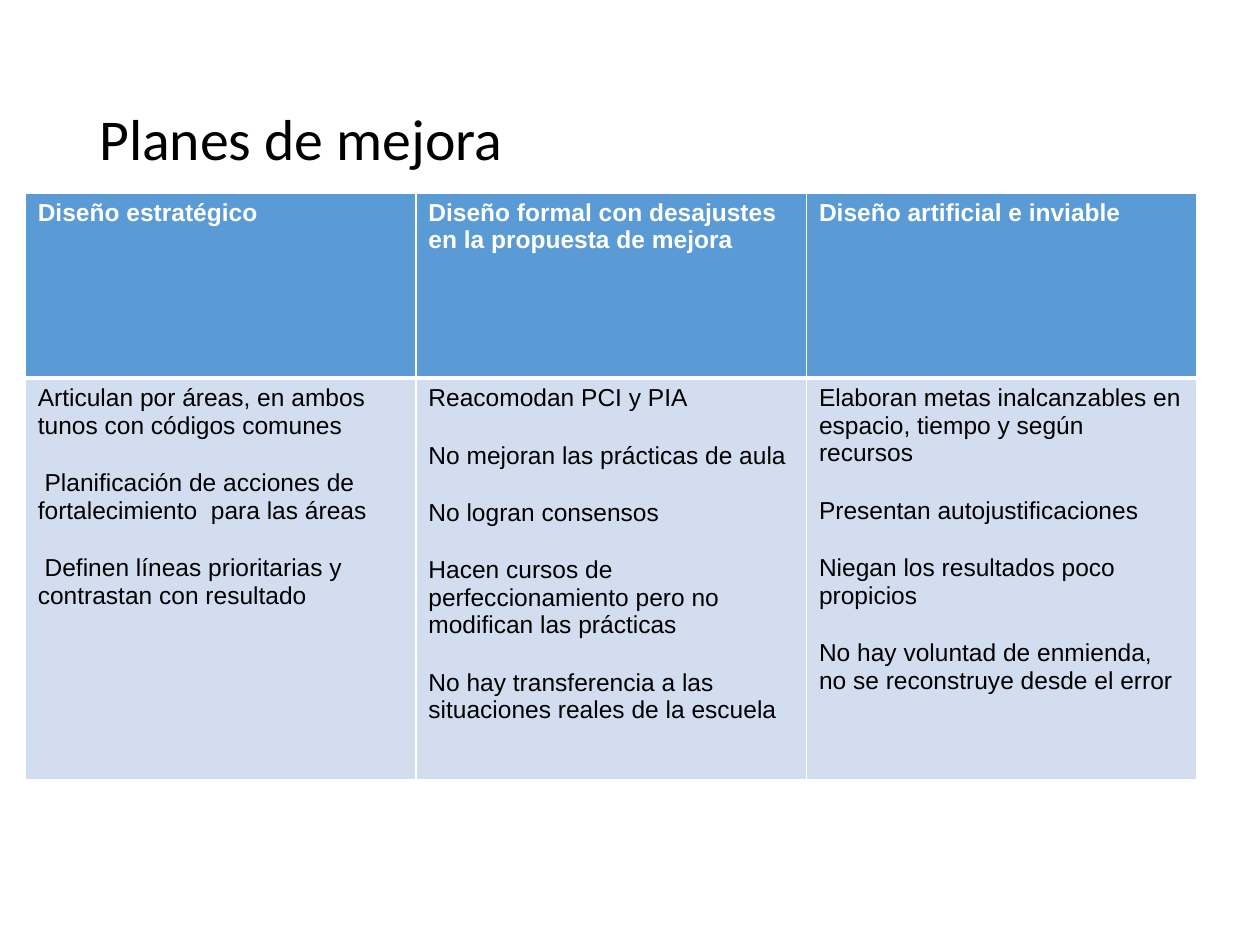
from dataclasses import dataclass

from lxml import etree
from pptx import Presentation
from pptx.dml.color import RGBColor
from pptx.enum.text import MSO_ANCHOR, MSO_AUTO_SIZE, PP_ALIGN
from pptx.oxml.ns import qn
from pptx.util import Pt

LEFT = PP_ALIGN.LEFT
MIDDLE = MSO_ANCHOR.MIDDLE
NO_FIT = MSO_AUTO_SIZE.NONE
TITLE_ONLY = 5


@dataclass(frozen=True)
class Theme:
    head: str = "5B9BD5"
    body: str = "D2DEEF"
    white: str = "FFFFFF"
    black: str = "000000"
    title_font: str = "Calibri"
    cell_font: str = "Arial"
    title_size: float = 33
    cell_size: float = 14
    gap: float = 17.1
    thin: float = 1
    thick: float = 3


@dataclass(frozen=True)
class Column:
    head: str
    items: tuple[str, ...]


@dataclass(frozen=True)
class Look:
    fill: str
    ink: str
    bold: bool
    top: float
    bottom: float


THEME = Theme()
HEAD = Look(THEME.head, THEME.white, True, THEME.thin, THEME.thick)
BODY = Look(THEME.body, THEME.black, False, THEME.thick, THEME.thin)

COLUMNS = (
    Column("Diseño estratégico", (
        "Articulan por áreas, en ambos tunos con códigos comunes",
        " Planificación de acciones de fortalecimiento  para las áreas",
        " Definen líneas prioritarias y contrastan con resultado",
    )),
    Column("Diseño formal con desajustes en la propuesta de mejora", (
        "Reacomodan PCI y PIA",
        "No mejoran las prácticas de aula",
        "No logran consensos",
        "Hacen cursos de perfeccionamiento pero no modifican las prácticas",
        "No hay transferencia a las situaciones reales de la escuela",
    )),
    Column("Diseño artificial e inviable", (
        "Elaboran metas inalcanzables en espacio, tiempo y según recursos",
        "Presentan autojustificaciones",
        "Niegan los resultados poco propicios",
        "No hay voluntad de enmienda, no se reconstruye desde el error",
    )),
)


def set_font(font, name: str, size: float, ink: str, bold: bool = False) -> None:
    font.name = name
    font.size = Pt(size)
    font.bold = bold
    font.color.rgb = RGBColor.from_string(ink)


def add_title(slide, text: str) -> None:
    title = slide.shapes.title
    title.left, title.top = Pt(49.5), Pt(28.75)
    title.width, title.height = Pt(621), Pt(104.4)
    frame = title.text_frame
    frame.text = text
    frame.auto_size = NO_FIT
    frame.vertical_anchor = MIDDLE
    line = frame.paragraphs[0]
    line.alignment = LEFT
    line.line_spacing = 0.9
    set_font(line.runs[0].font, THEME.title_font, THEME.title_size, THEME.black)


def set_edges(cell, look: Look) -> None:
    """Draw white borders; they must come before the fill in the cell's XML."""
    props = cell._tc.get_or_add_tcPr()
    widths = {"lnL": THEME.thin, "lnR": THEME.thin,
              "lnT": look.top, "lnB": look.bottom}
    for place, (tag, width) in enumerate(widths.items()):
        edge = etree.Element(qn(f"a:{tag}"), w=str(Pt(width)))
        fill = etree.SubElement(edge, qn("a:solidFill"))
        etree.SubElement(fill, qn("a:srgbClr"), val=THEME.white)
        props.insert(place, edge)


def fill_cell(cell, items: tuple[str, ...], look: Look) -> None:
    cell.fill.solid()
    cell.fill.fore_color.rgb = RGBColor.from_string(look.fill)
    set_edges(cell, look)
    frame = cell.text_frame
    frame.text = "\n".join(items)
    for place, line in enumerate(frame.paragraphs):
        line.space_before = Pt(THEME.gap if place else 0)
        set_font(line.runs[0].font, THEME.cell_font, THEME.cell_size,
                 look.ink, look.bold)


def add_plans(slide, columns: tuple[Column, ...]) -> None:
    table = slide.shapes.add_table(
        2, len(columns), Pt(14.4), Pt(110.2), Pt(669.6), Pt(335.5)).table
    table.rows[0].height = Pt(105.8)
    table.rows[1].height = Pt(229.7)
    for place, column in enumerate(columns):
        fill_cell(table.cell(0, place), (column.head,), HEAD)
        fill_cell(table.cell(1, place), column.items, BODY)


def main() -> None:
    deck = Presentation()
    deck.slide_width, deck.slide_height = Pt(720), Pt(540)
    slide = deck.slides.add_slide(deck.slide_layouts[TITLE_ONLY])
    add_title(slide, "Planes de mejora")
    add_plans(slide, COLUMNS)
    deck.save("out.pptx")


if __name__ == "__main__":
    main()
